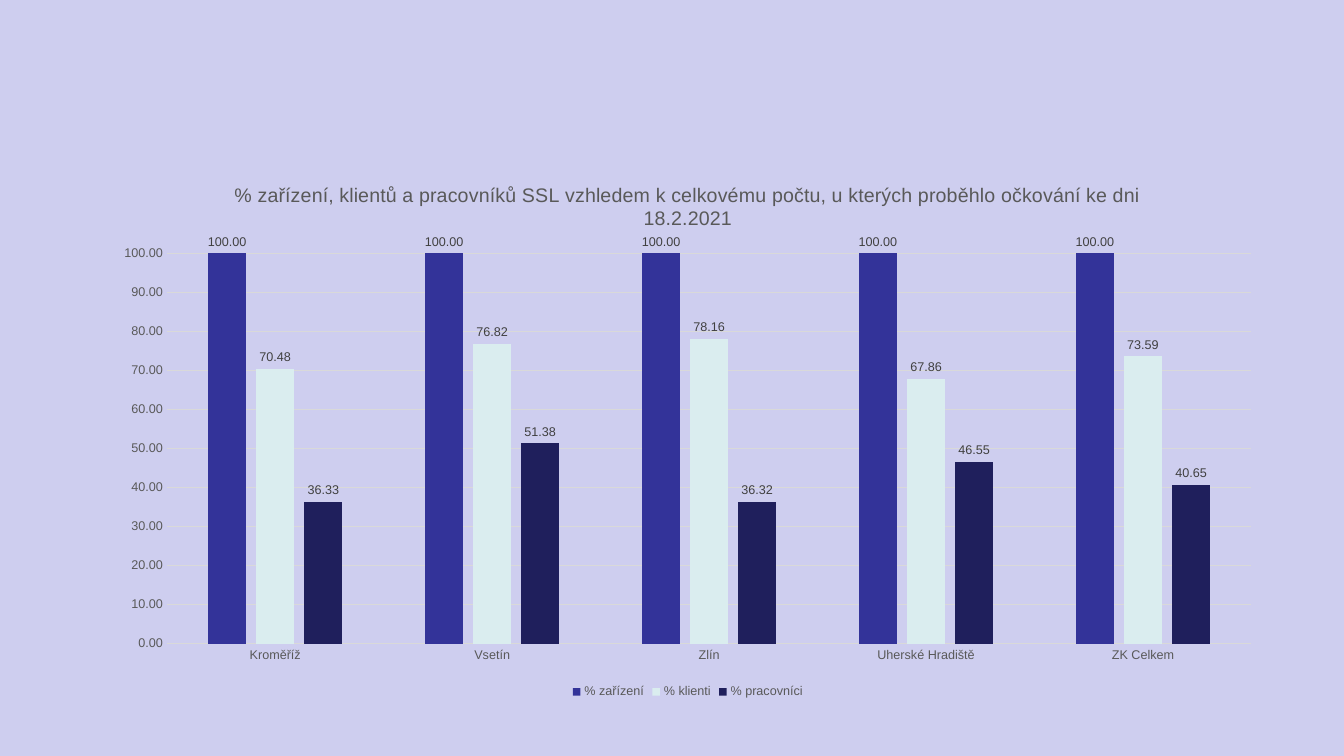
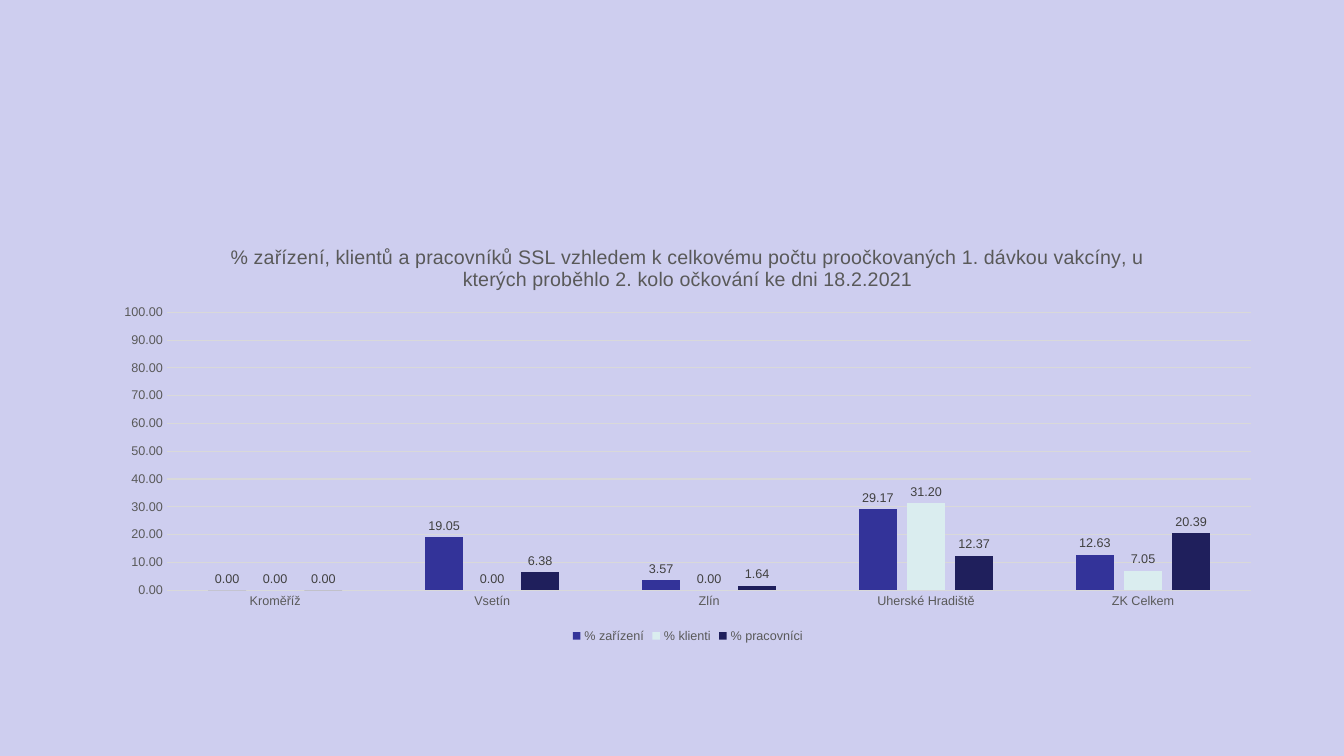
from pptx import Presentation
from pptx.chart.data import CategoryChartData
from pptx.dml.color import RGBColor
from pptx.enum.chart import (XL_CHART_TYPE, XL_LABEL_POSITION,
                             XL_LEGEND_POSITION, XL_TICK_MARK)
from pptx.util import Cm, Pt

BACK = RGBColor(0xCE, 0xCE, 0xEF)
GREY = RGBColor(0x59, 0x59, 0x59)
DARK = RGBColor(0x40, 0x40, 0x40)
RULE = RGBColor(0xD9, 0xD9, 0xD9)
BLACK = RGBColor(0, 0, 0)
FILLS = (RGBColor(0x33, 0x33, 0x99), RGBColor(0xDA, 0xED, 0xEF),
         RGBColor(0x1F, 0x1F, 0x5C))

FONT = "Arial"
FORMAT = "0.00"
TOWNS = ("Kroměříž", "Vsetín", "Zlín", "Uherské Hradiště", "ZK Celkem")
GROUPS = ("% zařízení", "% klienti", "% pracovníci")

PAGES = (
    ("% zařízení, klientů a pracovníků SSL vzhledem k celkovému počtu, "
     "u kterých proběhlo očkování ke dni 18.2.2021",
     4.11, 13.61,
     ((100, 100, 100, 100, 100),
      (70.48, 76.82, 78.16, 67.86, 73.59),
      (36.33, 51.38, 36.32, 46.55, 40.65))),
    ("% zařízení, klientů a pracovníků SSL vzhledem k celkovému počtu "
     "proočkovaných 1. dávkou vakcíny, u kterých proběhlo 2. kolo očkování "
     "ke dni 18.2.2021",
     5.72, 10.59,
     ((0, 19.05, 3.57, 29.17, 12.63),
      (0, 0, 0, 31.2, 7.05),
      (0, 6.38, 1.64, 12.37, 20.39))),
)


def style_font(font, size, color):
    font.name = FONT
    font.size = Pt(size)
    font.bold = False
    font.color.rgb = color


def style_line(line):
    line.color.rgb = RULE
    line.width = Pt(0.75)


def set_title(chart, text):
    chart.has_title = True
    chart.chart_title.include_in_layout = False
    frame = chart.chart_title.text_frame
    frame.text = text
    style_font(frame.paragraphs[0].runs[0].font, 14, GREY)


def set_axes(chart):
    for axis in (chart.category_axis, chart.value_axis):
        axis.major_tick_mark = XL_TICK_MARK.NONE
        axis.minor_tick_mark = XL_TICK_MARK.NONE
        style_font(axis.tick_labels.font, 9, GREY)
    style_line(chart.category_axis.format.line)
    scale = chart.value_axis
    scale.minimum_scale = 0
    scale.maximum_scale = 100
    scale.major_unit = 10
    scale.format.line.fill.background()
    scale.has_major_gridlines = True
    style_line(scale.major_gridlines.format.line)
    scale.tick_labels.number_format = FORMAT
    scale.tick_labels.number_format_is_linked = False


def set_bars(plot):
    plot.gap_width = 219
    plot.overlap = -27
    plot.vary_by_categories = False
    plot.has_data_labels = True
    labels = plot.data_labels
    labels.show_value = True
    labels.position = XL_LABEL_POSITION.OUTSIDE_END
    labels.number_format = FORMAT
    labels.number_format_is_linked = False
    style_font(labels.font, 9, DARK)
    for group, color in zip(plot.series, FILLS):
        group.invert_if_negative = False
        group.format.fill.solid()
        group.format.fill.fore_color.rgb = color


def set_legend(chart):
    chart.has_legend = True
    chart.legend.position = XL_LEGEND_POSITION.BOTTOM
    chart.legend.include_in_layout = False
    style_font(chart.legend.font, 9, GREY)


def add_bars(slide, title, top, height, rows):
    data = CategoryChartData(number_format=FORMAT)
    data.categories = TOWNS
    for name, row in zip(GROUPS, rows):
        data.add_series(name, row)
    chart = slide.shapes.add_chart(
        XL_CHART_TYPE.COLUMN_CLUSTERED, Cm(2.54), Cm(top), Cm(29.59),
        Cm(height), data).chart
    style_font(chart.font, 10, BLACK)
    set_title(chart, title)
    set_axes(chart)
    set_bars(chart.plots[0])
    set_legend(chart)


def main():
    deck = Presentation()
    deck.slide_width = Cm(33.87)
    deck.slide_height = Cm(19.05)
    fill = deck.slide_master.background.fill
    fill.solid()
    fill.fore_color.rgb = BACK
    blank = deck.slide_layouts[6]
    for page in PAGES:
        add_bars(deck.slides.add_slide(blank), *page)
    deck.save("out.pptx")


if __name__ == "__main__":
    main()
